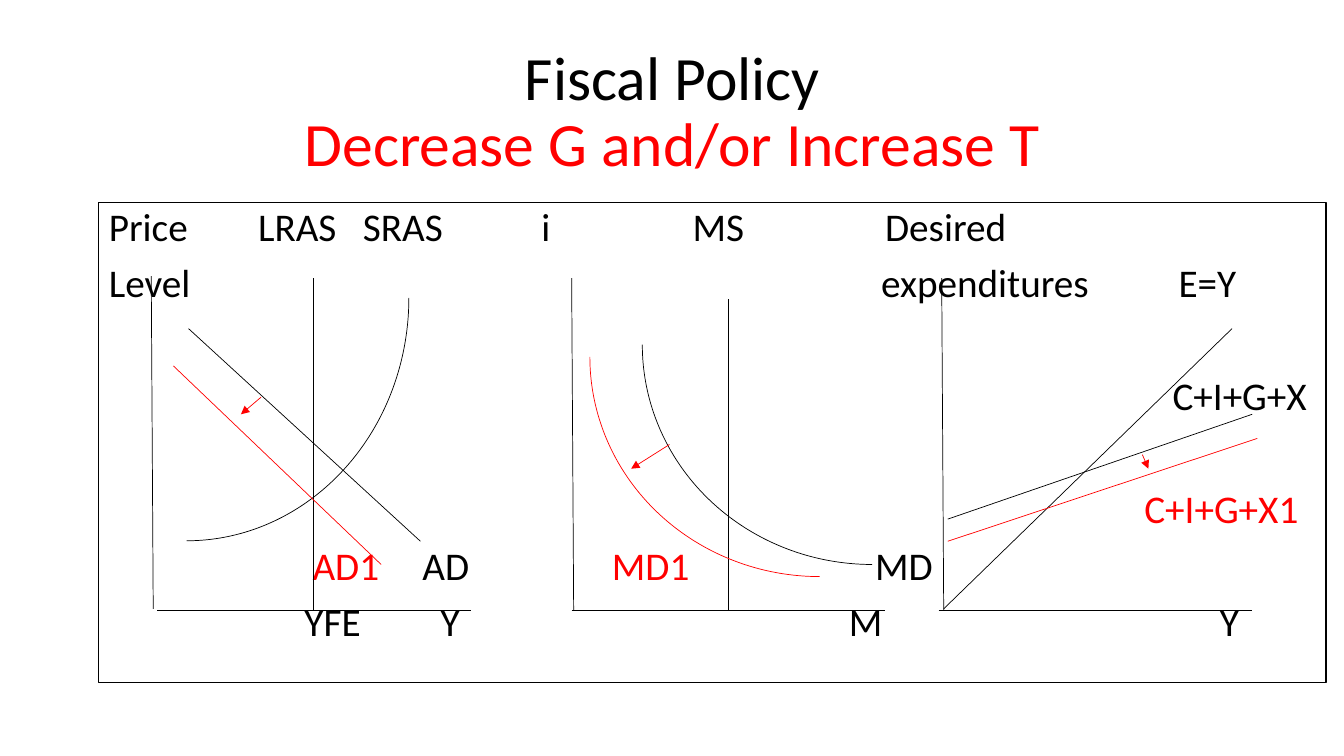
from lxml import etree
from pptx import Presentation
from pptx.dml.color import RGBColor
from pptx.enum.shapes import MSO_CONNECTOR, MSO_SHAPE
from pptx.enum.text import MSO_ANCHOR, MSO_AUTO_SIZE, PP_ALIGN
from pptx.oxml.ns import qn
from pptx.util import Inches, Pt

BLACK, RED, WHITE = "000000", "FF0000", "FFFFFF"
FRAME_TOP, ROW_PITCH = 2.01, 0.56


def color(hex_code):
    return RGBColor.from_string(hex_code)


class PolicySlide:
    font = "Calibri"
    title_size, label_size = Pt(44), Pt(28)
    curve_width = Pt(0.5)

    def __init__(self, deck):
        self.slide = deck.slides.add_slide(deck.slide_layouts[1])
        self.shapes = self.slide.shapes

    def place(self, shape, left, top, width, height):
        shape.left, shape.top = Inches(left), Inches(top)
        shape.width, shape.height = Inches(width), Inches(height)

    def run(self, paragraph, text, size, ink):
        paragraph.line_spacing = 0.9
        run = paragraph.add_run()
        run.text = text
        run.font.name, run.font.size = self.font, size
        run.font.color.rgb = color(ink)

    def title(self, policy, action):
        heading = self.shapes.title
        self.place(heading, 0.92, 0.4, 11.5, 1.45)
        frame = heading.text_frame
        frame.auto_size = MSO_AUTO_SIZE.NONE
        frame.vertical_anchor = MSO_ANCHOR.MIDDLE
        paragraph = frame.paragraphs[0]
        paragraph.alignment = PP_ALIGN.CENTER
        self.run(paragraph, policy, self.title_size, BLACK)
        paragraph.add_line_break()
        self.run(paragraph, action, self.title_size, RED)

    def graph_frame(self, lines):
        body = self.slide.placeholders[1]
        self.place(body, 0.98, FRAME_TOP, 12.17, 4.76)
        body.fill.solid()
        body.fill.fore_color.rgb = color(WHITE)
        body.line.color.rgb, body.line.width = color(BLACK), Pt(1)
        frame = body.text_frame
        frame.auto_size, frame.word_wrap = MSO_AUTO_SIZE.NONE, True
        for index, text in enumerate(lines):
            paragraph = frame.add_paragraph() if index else frame.paragraphs[0]
            paragraph.space_before = Pt(10)
            self.run(paragraph, text, self.label_size, BLACK)
            props = paragraph._p.get_or_add_pPr()
            props.set("marL", "0")
            props.set("indent", "0")
            etree.SubElement(props, qn("a:buNone"))

    def label(self, row, left, text, ink=BLACK):
        top = FRAME_TOP + row * ROW_PITCH
        width = 0.3 + 0.22 * len(text)
        box = self.shapes.add_textbox(Inches(left), Inches(top), Inches(width), Inches(0.53))
        frame = box.text_frame
        frame.word_wrap = True
        frame.margin_left = frame.margin_right = 0
        self.run(frame.paragraphs[0], text, self.label_size, ink)

    def line(self, start, end, ink=BLACK, arrow=False):
        ends = [Inches(length) for length in (*start, *end)]
        line = self.shapes.add_connector(MSO_CONNECTOR.STRAIGHT, *ends)
        line.line.color.rgb, line.line.width = color(ink), self.curve_width
        props = line._element.spPr
        if arrow:
            etree.SubElement(props.find(qn("a:ln")), qn("a:tailEnd"), type="triangle")
        etree.SubElement(props, qn("a:effectLst"))

    def curve(self, left, top, width, height, rotation, ink=BLACK):
        box = [Inches(length) for length in (left, top, width, height)]
        arc = self.shapes.add_shape(MSO_SHAPE.ARC, *box)
        arc.rotation = rotation
        arc.shadow.inherit = False
        arc.fill.background()
        arc.line.color.rgb, arc.line.width = color(ink), self.curve_width


def main():
    deck = Presentation()
    deck.slide_width, deck.slide_height = Inches(13.33), Inches(7.5)
    policy = PolicySlide(deck)
    policy.title("Fiscal Policy", "Decrease G and/or Increase T")
    policy.graph_frame(["Price", "Level"])

    # Graph labels: text row in the frame, left edge, text, colour
    for label in (
        (0, 2.56, "LRAS"), (0, 3.6, "SRAS"), (0, 5.37, "i"),
        (0, 6.87, "MS"), (0, 8.78, "Desired"),
        (1, 8.74, "expenditures"), (1, 11.69, "E=Y"),
        (3, 11.63, "C+I+G+X"),
        (5, 11.35, "C+I+G+X1", RED),
        (6, 3.1, "AD1", RED), (6, 4.19, "AD"), (6, 6.07, "MD1", RED), (6, 8.68, "MD"),
        (7, 3.02, "YFE"), (7, 4.37, "Y"), (7, 8.42, "M"), (7, 12.1, "Y"),
    ):
        policy.label(*label)

    # Axes of the three graphs
    for axis_x, axis_top, base_x in ((1.5, 2.74, 1.56), (5.67, 2.76, 5.67), (9.34, 2.76, 9.31)):
        policy.line((axis_x, axis_top), (axis_x + 0.02, axis_top + 3.3))
        policy.line((base_x, 6.06), (base_x + 3.11, 6.06))

    # Aggregate demand and supply
    policy.line((3.11, 2.76), (3.11, 6.06))
    policy.line((1.87, 3.26), (4.17, 5.37))
    policy.curve(-0.56, 0.75, 4.82, 4.41, 90)
    policy.line((1.72, 3.63), (3.78, 5.6), RED)

    # Money market
    policy.line((7.22, 2.97), (7.22, 6.05))
    policy.curve(6.37, 1.24, 4.56, 4.36, 180)
    policy.curve(5.85, 1.36, 4.56, 4.36, 180, RED)

    # Desired expenditures
    policy.line((9.36, 6.04), (12.22, 3.26))
    policy.line((9.4, 5.15), (12.42, 4.11))
    policy.line((9.4, 5.37), (12.47, 4.35), RED)

    # Shift arrows
    for start, end in (((2.59, 3.94), (2.39, 4.11)),
                       ((6.64, 4.41), (6.26, 4.65)),
                       ((11.33, 4.51), (11.39, 4.65))):
        policy.line(start, end, RED, arrow=True)

    deck.save("out.pptx")


if __name__ == "__main__":
    main()
